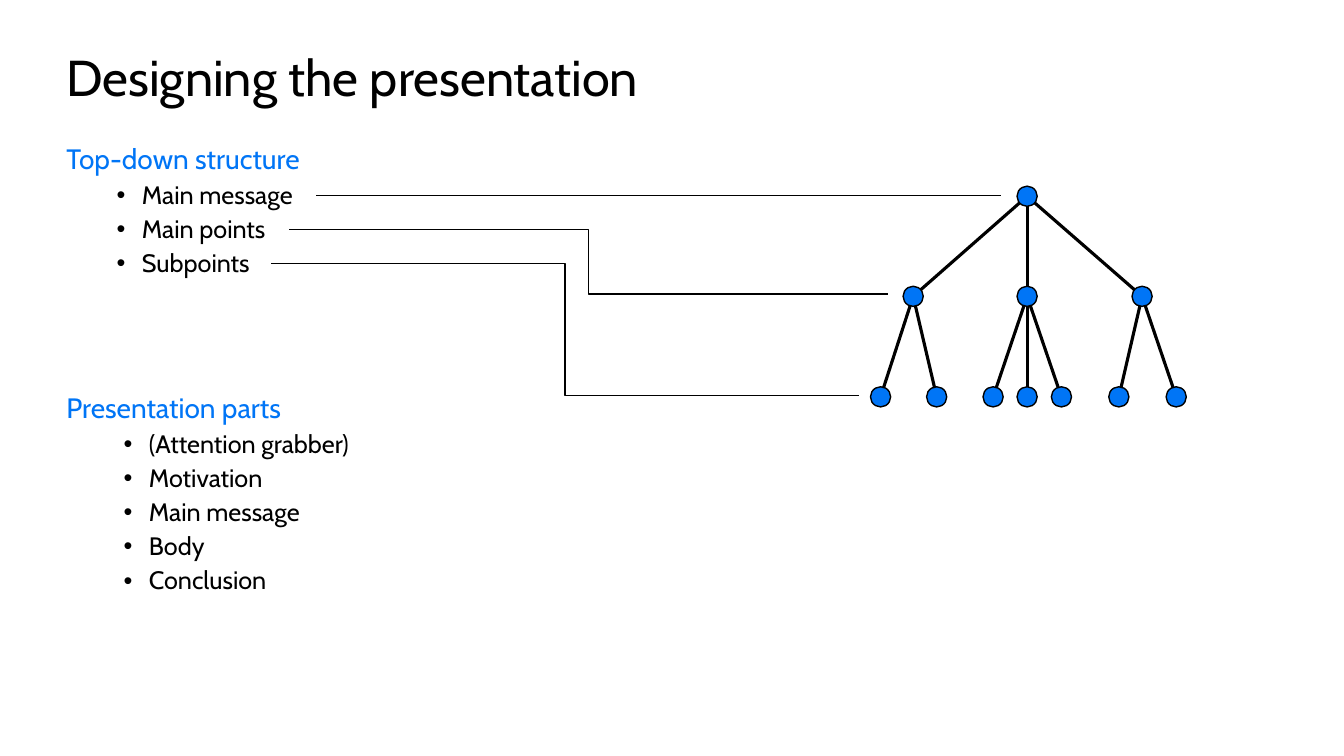
"""Build a slide on designing a presentation, with an outline beside a message tree."""
from dataclasses import dataclass

from lxml import etree
from pptx import Presentation
from pptx.dml.color import RGBColor
from pptx.enum import shapes, text
from pptx.oxml import ns
from pptx.util import Pt


@dataclass(frozen=True)
class Theme:
    font: str = "Cabin"
    ink: RGBColor = RGBColor(0x00, 0x00, 0x00)
    accent: RGBColor = RGBColor(0x00, 0x75, 0xF6)
    title_size: int = 36
    heading_size: int = 20
    item_size: int = 18
    branch_width: float = 2.25
    thin_width: float = 1


theme = Theme()
deck = Presentation()
deck.slide_width, deck.slide_height = Pt(960), Pt(540)
page = deck.slides.add_slide(deck.slide_layouts[6])


def add_span(para, words, size, color, before=0):
    para.line_spacing = 0.9
    para.space_before = Pt(before)
    span = para.add_run()
    span.text = words
    span.font.name = theme.font
    span.font.size = Pt(size)
    span.font.color.rgb = color


def add_link(kind, start, end, width):
    link = page.shapes.add_connector(kind, *(Pt(value) for value in (*start, *end)))
    link.line.color.rgb = theme.ink
    link.line.width = Pt(width)
    etree.SubElement(link._element.spPr, ns.qn("a:effectLst"))


title_box = page.shapes.add_textbox(Pt(40.3), Pt(28.8), Pt(878.4), Pt(56.9))
title_box.text_frame.word_wrap = True
title_box.text_frame.vertical_anchor = text.MSO_ANCHOR.MIDDLE
add_span(title_box.text_frame.paragraphs[0], "Designing the presentation",
         theme.title_size, theme.ink)

outline = [
    ("Top-down structure", 10, 54, ["Main message", "Main points", "Subpoints"]),
    ("Presentation parts", 83, 59, ["(Attention grabber)", "Motivation", "Main message",
                                    "Body", "Conclusion"]),
]
body_box = page.shapes.add_textbox(Pt(40.3), Pt(100.1), Pt(878.4), Pt(411.1))
body = body_box.text_frame
body.word_wrap = True
para = body.paragraphs[0]
for heading, gap, indent, items in outline:
    if para.runs:
        para = body.add_paragraph()
    add_span(para, heading, theme.heading_size, theme.accent, gap)
    for item in items:
        para = body.add_paragraph()
        para.level = 1
        add_span(para, item, theme.item_size, theme.ink, 5)
        props = para._p.get_or_add_pPr()
        props.set("marL", str(Pt(indent)))
        props.set("indent", str(Pt(-18)))
        etree.SubElement(props, ns.qn("a:buFont"), typeface="Arial")
        etree.SubElement(props, ns.qn("a:buChar"), char="•")

root_y, point_y, subpoint_y = 140.2, 211.7, 283.5
root = (733.7, root_y)
tree = {
    652.3: [629, 669.1],
    733.7: [709.4, 733.7, 758.2],
    815.8: [799.2, 840.2],
}
branches = []
for point_x, subpoints in tree.items():
    point = (point_x, point_y)
    branches.append((root, point))
    branches += [(point, (x, subpoint_y)) for x in subpoints]
for start, end in branches:
    add_link(shapes.MSO_CONNECTOR.STRAIGHT, start, end, theme.branch_width)

diameter = 14.4
for x, y in [root] + [end for start, end in branches]:
    node = page.shapes.add_shape(shapes.MSO_SHAPE.OVAL, Pt(x - diameter / 2),
                                 Pt(y - diameter / 2), Pt(diameter), Pt(diameter))
    node.shadow.inherit = False
    node.fill.solid()
    node.fill.fore_color.rgb = theme.accent
    node.line.color.rgb = theme.ink
    node.line.width = Pt(theme.thin_width)

pointers = [
    ((226, 139.6), (715.2, 139.6)),
    ((206.6, 163.8), (634.3, 210)),
    ((193.7, 188.4), (613.3, 282.5)),
]
for start, end in pointers:
    add_link(shapes.MSO_CONNECTOR.ELBOW, start, end, theme.thin_width)

deck.save("out.pptx")
